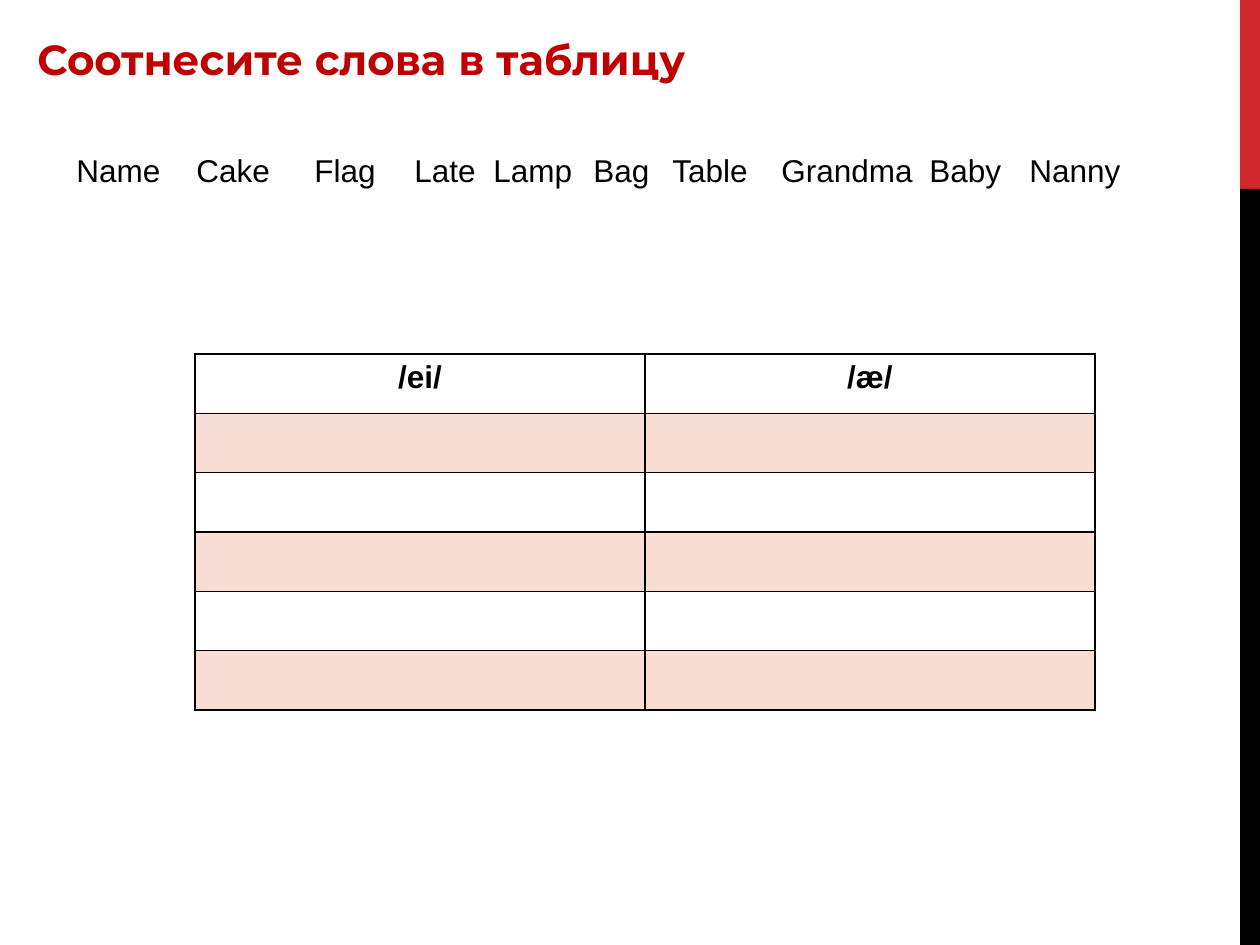
from lxml.etree import SubElement
from pptx import Presentation
from pptx.dml.color import RGBColor
from pptx.enum.shapes import MSO_SHAPE
from pptx.enum.text import MSO_AUTO_SIZE, PP_ALIGN
from pptx.oxml.ns import qn
from pptx.util import Emu, Pt

PX_PER_INCH = 126
RED = RGBColor(0xD1, 0x28, 0x2E)
DARK_RED = RGBColor(0xC0, 0x00, 0x00)
ORANGE = RGBColor(0xDC, 0x59, 0x24)
BLACK = RGBColor(0x00, 0x00, 0x00)

WORDS = [  # word, left, width
    ("Name", 64, 129),
    ("Cake", 184, 118),
    ("Flag", 302, 100),
    ("Late", 402, 89),
    ("Lamp", 481, 110),
    ("Bag", 581, 118),
    ("Table", 660, 118),
    ("Grandma", 769, 159),
    ("Baby", 917, 110),
    ("Nanny", 1017, 118),
]
SOUNDS = ["/ei/", "/æ/"]
TABLE_ROWS = 6


def px(length):
    return Emu(round(length * 914400 / PX_PER_INCH))


class SlideBuilder:
    """Holds the text style and the slide being filled."""

    font = "Arial"
    size = 18
    color = BLACK

    def __init__(self, slide):
        self.slide = slide

    def run(self, paragraph, wording, font=None, size=None, color=None, bold=False):
        run = paragraph.add_run()
        run.text = wording
        run.font.name = font or self.font
        run.font.size = Pt(size or self.size)
        run.font.color.rgb = color or self.color
        run.font.bold = bold

    def bar(self, left, top, width, height, color):
        bar = self.slide.shapes.add_shape(
            MSO_SHAPE.RECTANGLE, px(left), px(top), px(width), px(height))
        bar.shadow.inherit = False
        bar.fill.solid()
        bar.fill.fore_color.rgb = color
        bar.line.fill.background()

    def text(self, wording, left, top, width, height, wrap=True, **style):
        frame = self.slide.shapes.add_textbox(
            px(left), px(top), px(width), px(height)).text_frame
        frame.word_wrap = wrap
        frame.auto_size = MSO_AUTO_SIZE.SHAPE_TO_FIT_TEXT
        self.run(frame.paragraphs[0], wording, **style)

    def table(self, headings, rows, left, top, width, height):
        """Bordered table with a heading row and every second row tinted."""
        table = self.slide.shapes.add_table(
            rows, len(headings), px(left), px(top), px(width), px(height)).table
        table.first_row = False
        table.horz_banding = False
        for row_index, row in enumerate(table.rows):
            for cell in row.cells:
                self.border(cell)
                if row_index % 2:
                    self.tint(cell, ORANGE, 20)
                else:
                    cell.fill.background()
        for cell, heading in zip(table.rows[0].cells, headings):
            paragraph = cell.text_frame.paragraphs[0]
            paragraph.alignment = PP_ALIGN.CENTER
            self.run(paragraph, heading, bold=True)

    def border(self, cell):
        properties = cell._tc.get_or_add_tcPr()
        for side in ("a:lnL", "a:lnR", "a:lnT", "a:lnB"):
            line = SubElement(properties, qn(side), w=str(Pt(1)))
            fill = SubElement(line, qn("a:solidFill"))
            SubElement(fill, qn("a:srgbClr"), val=str(BLACK))

    def tint(self, cell, color, opacity):
        cell.fill.solid()
        cell.fill.fore_color.rgb = color
        color_element = cell._tc.tcPr.find(qn("a:solidFill")).find(qn("a:srgbClr"))
        SubElement(color_element, qn("a:alpha"), val=str(opacity * 1000))


def main():
    deck = Presentation()
    deck.slide_width, deck.slide_height = px(1260), px(945)
    builder = SlideBuilder(deck.slides.add_slide(deck.slide_layouts[6]))

    builder.bar(1240, 0, 20, 189, RED)
    builder.bar(1240, 189, 20, 756, BLACK)
    builder.text("Соотнесите слова в таблицу", 25, 27, 707, 63, wrap=False,
                 font="Montserrat", size=24, color=DARK_RED, bold=True)
    for word, left, width in WORDS:
        builder.text(word, left, 145, width, 50)
    builder.table(SOUNDS, TABLE_ROWS, 195, 354, 900, 356)

    deck.save("out.pptx")


if __name__ == "__main__":
    main()
